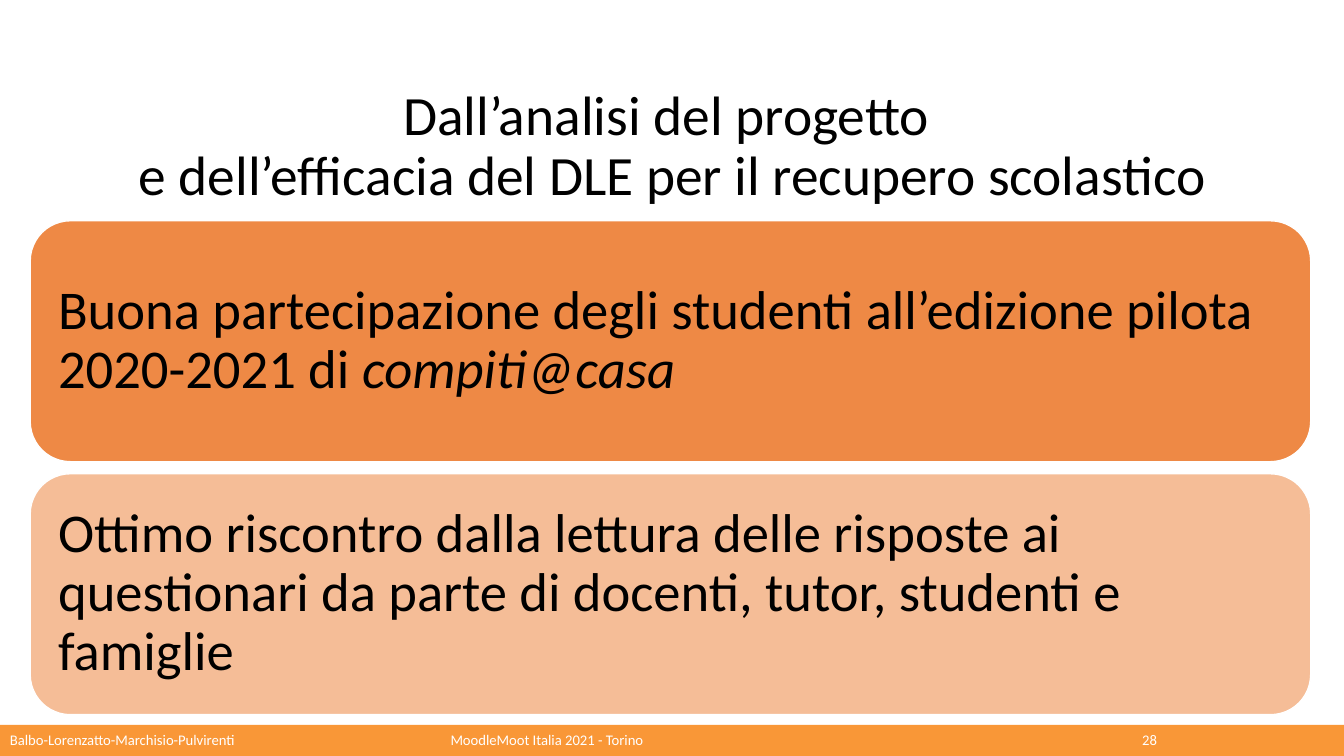
from dataclasses import dataclass

from lxml.etree import SubElement
from pptx import Presentation
from pptx.dml.color import RGBColor
from pptx.enum.shapes import MSO_SHAPE as Shape
from pptx.enum.text import MSO_ANCHOR as Anchor, PP_ALIGN as Align
from pptx.oxml.ns import qn
from pptx.util import Inches, Pt


@dataclass(frozen=True)
class Theme:
    font: str = "Calibri"
    text: str = "000000"
    light: str = "FFFFFF"
    card: str = "ED7D31"
    footer: str = "F99737"
    title_size: float = 39.6
    card_size: float = 39
    footer_size: float = 10.5


THEME = Theme()
WIDTH, HEIGHT = 13.33, 7.5
CARD_LEFT, CARD_TOP, CARD_WIDTH, CARD_HEIGHT = 0.3, 2.19, 12.7, 2.39
CARD_STEP = 2.51
FOOTER_TOP, FOOTER_HEIGHT = 7.19, 0.31

TITLE = ["Dall’analisi del progetto ", "e dell’efficacia del DLE per il recupero scolastico"]
# Each card: opacity in percent, then (text, italic) runs.
CARDS = [
    (90, [("Buona partecipazione degli studenti all’edizione pilota 2020-2021 di ", False),
          ("compiti@casa", True)]),
    (50, [("Ottimo riscontro dalla lettura delle risposte ai questionari da parte di "
           "docenti, tutor, studenti e famiglie", False)]),
]
# Each footer entry: left, width, text.
FOOTER = [
    (0, 4.08, "Balbo-Lorenzatto-Marchisio-Pulvirenti"),
    (4.37, 4, "MoodleMoot Italia 2021 - Torino"),
    (11.23, 1, "28"),
]


def write_text(shape, lines, size, color=THEME.text, align=Align.LEFT,
               inset=(0.1, 0.05), spacing=0.9):
    """Write one paragraph; lines are lists of (text, italic) runs."""
    frame = shape.text_frame
    frame.word_wrap = True
    frame.vertical_anchor = Anchor.MIDDLE
    frame.margin_left = frame.margin_right = Inches(inset[0])
    frame.margin_top = frame.margin_bottom = Inches(inset[1])
    paragraph = frame.paragraphs[0]
    paragraph.alignment = align
    paragraph.line_spacing = spacing
    paragraph.font.size = Pt(size)
    for index, runs in enumerate(lines):
        if index:
            paragraph.add_line_break()
        for text, italic in runs:
            run = paragraph.add_run()
            run.text = text
            run.font.name = THEME.font
            run.font.size = Pt(size)
            run.font.italic = italic
            run.font.color.rgb = RGBColor.from_string(color)


def add_text_box(slide, box, lines, **text_format):
    text_box = slide.shapes.add_textbox(*map(Inches, box))
    write_text(text_box, lines, **text_format)


def add_block(slide, kind, box, fill, opacity=100, line=None):
    block = slide.shapes.add_shape(kind, *map(Inches, box))
    block.shadow.inherit = False
    block.fill.solid()
    block.fill.fore_color.rgb = RGBColor.from_string(fill)
    if opacity < 100:
        color = block.fill._xPr.find(qn("a:solidFill"))[0]
        SubElement(color, qn("a:alpha"), val=str(opacity * 1000))
    if line:
        block.line.color.rgb = RGBColor.from_string(line)
        block.line.width = Pt(1)
    else:
        block.line.fill.background()
    return block


def add_cards(slide):
    for row, (opacity, runs) in enumerate(CARDS):
        box = (CARD_LEFT, CARD_TOP + row * CARD_STEP, CARD_WIDTH, CARD_HEIGHT)
        card = add_block(slide, Shape.ROUNDED_RECTANGLE, box, THEME.card, opacity, THEME.light)
        write_text(card, [runs], size=THEME.card_size, inset=(0.16, 0.16))


def add_footer(slide):
    add_block(slide, Shape.RECTANGLE, (0, FOOTER_TOP, WIDTH, FOOTER_HEIGHT), THEME.footer)
    for left, width, text in FOOTER:
        add_text_box(slide, (left, FOOTER_TOP, width, FOOTER_HEIGHT), [[(text, False)]],
                     size=THEME.footer_size, color=THEME.light)


def main():
    presentation = Presentation()
    presentation.slide_width, presentation.slide_height = Inches(WIDTH), Inches(HEIGHT)
    slide = presentation.slides.add_slide(presentation.slide_layouts[6])
    add_footer(slide)
    add_text_box(slide, (0.92, 0.74, 11.5, 1.45), [[(line, False)] for line in TITLE],
                 size=THEME.title_size, align=Align.CENTER)
    add_cards(slide)
    presentation.save("out.pptx")


if __name__ == "__main__":
    main()
